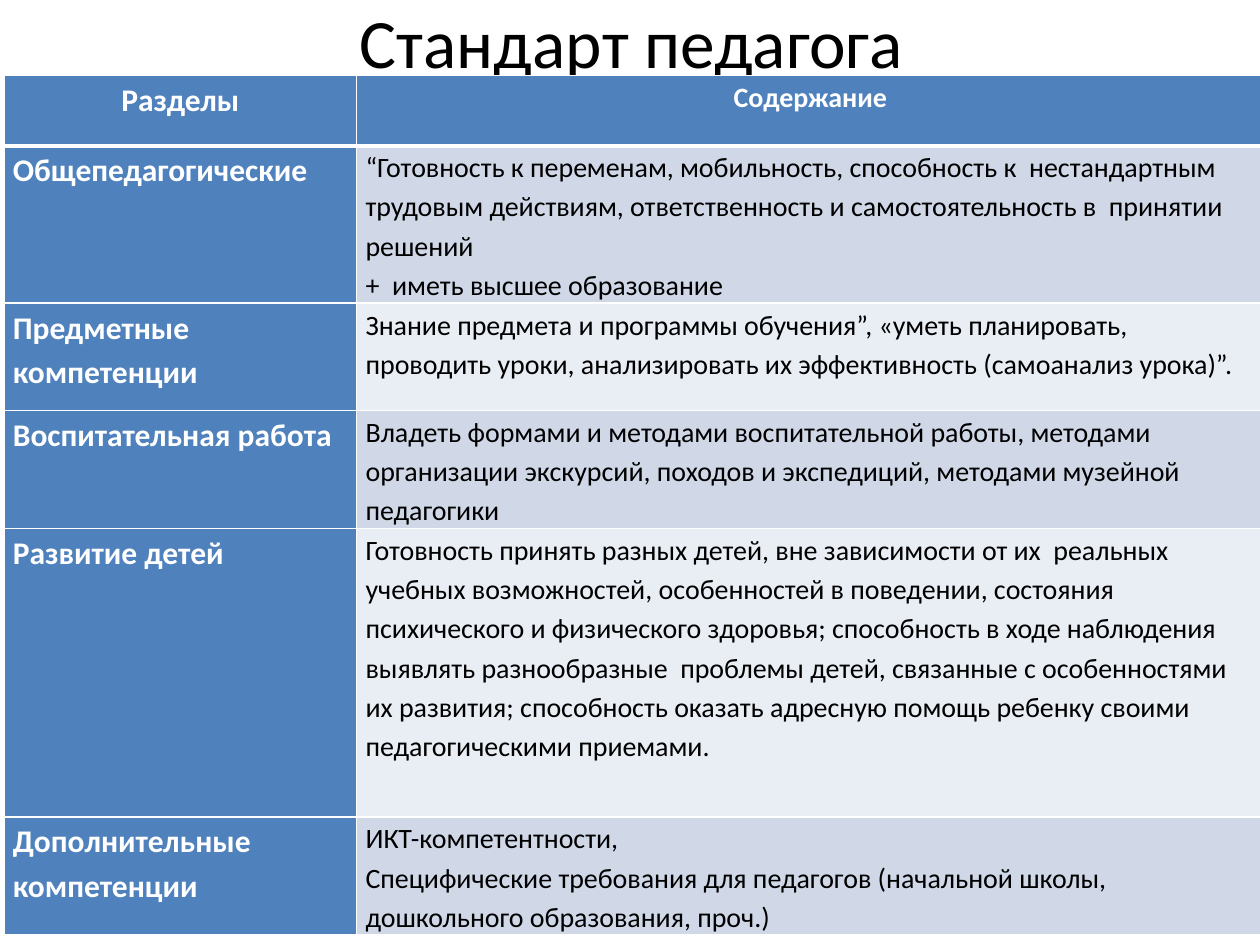
import pptx
import pptx.util
import pptx.dml.color
import pptx.enum.text
import pptx.oxml
import pptx.oxml.ns
from pptx.util import Cm, Pt

TITLE = "Стандарт педагога"
HEAD = ("Разделы", "Содержание")
ROWS = [
    ("Общепедагогические",
     "“Готовность к переменам, мобильность, способность к  нестандартным трудовым "
     "действиям, ответственность и самостоятельность в  принятии решений\n"
     "+  иметь высшее образование"),
    ("Предметные компетенции",
     "Знание предмета и программы обучения”, «уметь планировать, проводить уроки, "
     "анализировать их эффективность (самоанализ урока)”."),
    ("Воспитательная работа",
     "Владеть формами и методами воспитательной работы, методами организации "
     "экскурсий, походов и экспедиций, методами музейной педагогики"),
    ("Развитие детей",
     "Готовность принять разных детей, вне зависимости от их  реальных учебных "
     "возможностей, особенностей в поведении, состояния  психического и физического "
     "здоровья; способность в ходе наблюдения выявлять разнообразные  проблемы детей, "
     "связанные с особенностями их развития; способность оказать адресную помощь "
     "ребенку своими педагогическими приемами."),
    ("Дополнительные компетенции",
     "ИКТ-компетентности,\n"
     "Специфические требования для педагогов (начальной школы,  дошкольного "
     "образования, проч.)"),
]
WIDTHS = (7.11, 18.29)
HEIGHTS = (1.42, 2.9, 2.16, 2.16, 5.82, 2.16)
SIZES = (18, 16)
COLORS = {"blue": "4F81BD", "odd": "D0D8E8", "even": "E9EDF4",
          "white": "FFFFFF", "black": "000000"}
FONT = "Calibri"


def color(name):
    return pptx.dml.color.RGBColor.from_string(COLORS[name])


def style(para, size, ink, bold=False):
    para.font.name = FONT
    para.font.size = Pt(size)
    para.font.bold = bold
    para.font.color.rgb = color(ink)


def border(cell, head):
    props = cell._tc.get_or_add_tcPr()
    for i, side in enumerate("LRTB"):
        width = Pt(3 if head and side == "B" else 1)
        props.insert(i, pptx.oxml.parse_xml(
            f'<a:ln{side} {pptx.oxml.ns.nsdecls("a")} w="{width}"><a:solidFill>'
            f'<a:srgbClr val="{COLORS["white"]}"/></a:solidFill></a:ln{side}>'))


def fill_cell(cell, text, row, col):
    head = row == 0
    strong = head or col == 0
    cell.margin_left = cell.margin_right = Cm(0.18)
    cell.margin_top = cell.margin_bottom = 0
    cell.fill.solid()
    cell.fill.fore_color.rgb = color("blue" if strong else "odd" if row % 2 else "even")
    border(cell, head)
    cell.text = text
    for para in cell.text_frame.paragraphs:
        para.line_spacing = 1.15
        if head:
            para.alignment = pptx.enum.text.PP_ALIGN.CENTER
        style(para, SIZES[col], "white" if strong else "black", strong)


def main():
    deck = pptx.Presentation()
    deck.slide_width, deck.slide_height = Cm(25.4), Cm(19.05)
    slide = deck.slides.add_slide(deck.slide_layouts[5])

    title = slide.shapes.title
    title.left, title.top, title.width, title.height = Cm(1.3), Cm(0.33), Cm(22.86), Cm(0.97)
    title.text = TITLE
    frame = title.text_frame
    frame.auto_size = pptx.enum.text.MSO_AUTO_SIZE.NONE
    frame.vertical_anchor = pptx.enum.text.MSO_ANCHOR.MIDDLE
    frame.paragraphs[0].alignment = pptx.enum.text.PP_ALIGN.CENTER
    style(frame.paragraphs[0], 39.6, "black")

    cells = [HEAD] + ROWS
    table = slide.shapes.add_table(len(cells), len(HEAD), Cm(0.08), Cm(1.52),
                                   Cm(sum(WIDTHS)), Cm(sum(HEIGHTS))).table
    table.first_col = True
    for col, width in zip(table.columns, WIDTHS):
        col.width = Cm(width)
    for row, height in zip(table.rows, HEIGHTS):
        row.height = Cm(height)
    for r, texts in enumerate(cells):
        for c, text in enumerate(texts):
            fill_cell(table.cell(r, c), text, r, c)

    deck.save("out.pptx")


if __name__ == "__main__":
    main()
